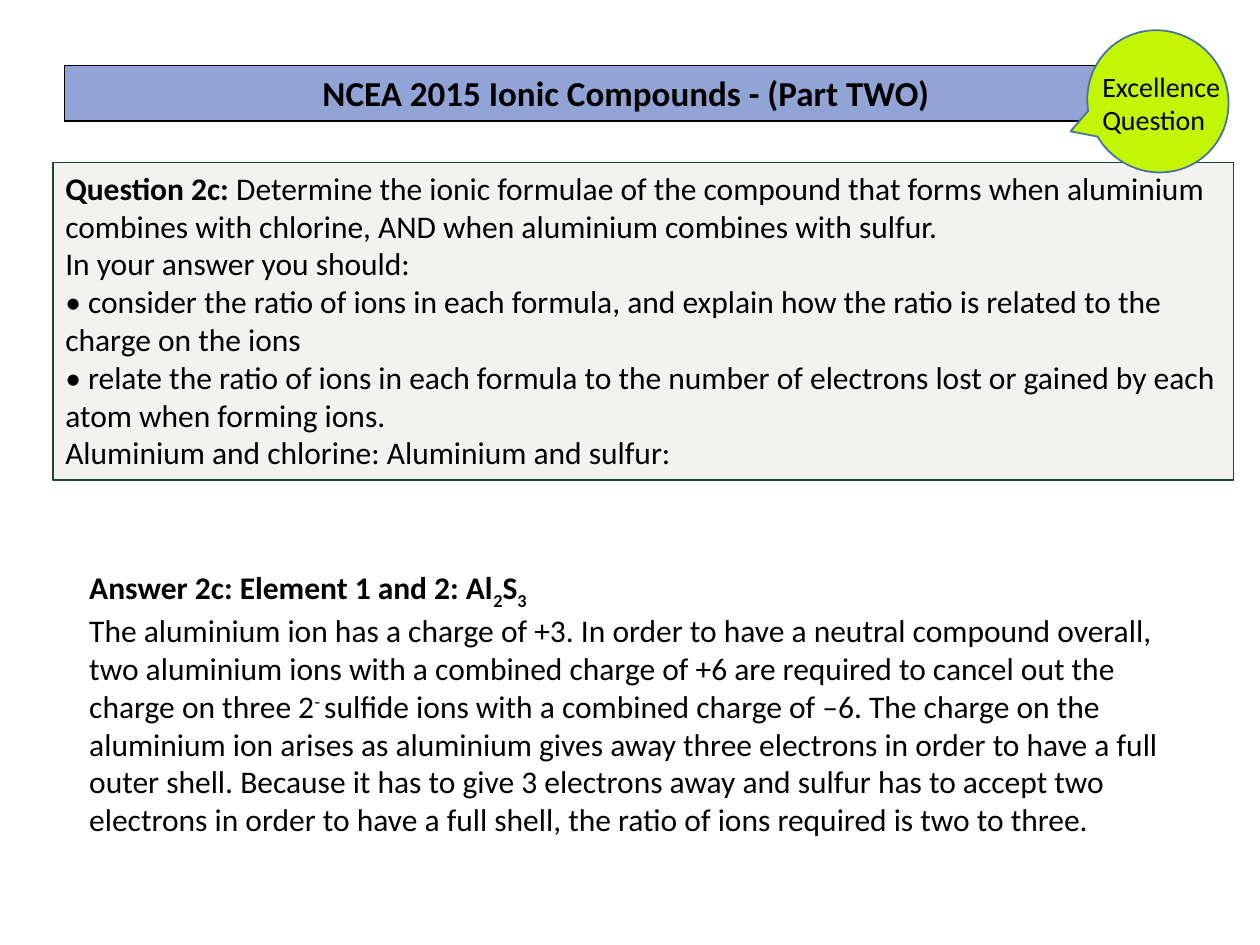
from lxml.etree import SubElement
from pptx import Presentation
from pptx.dml.color import RGBColor
from pptx.enum.shapes import MSO_SHAPE
from pptx.enum.text import MSO_ANCHOR, MSO_AUTO_SIZE, PP_ALIGN
from pptx.oxml.ns import qn
from pptx.util import Inches, Pt

COLORS = {"text": "000000", "banner": "92A4D6", "panel": "EFEFEE",
          "panel_line": "1B452F", "callout": "C2F604", "callout_line": "43739E"}
FONT = "Calibri"
FRAME_FORMAT = {"word_wrap": True, "auto_size": MSO_AUTO_SIZE.SHAPE_TO_FIT_TEXT,
                "vertical_anchor": MSO_ANCHOR.TOP}
BASELINES = {"sub": -25, "super": 30}

# Each paragraph is a list of runs: (text, styles)
TITLE = [[("NCEA 2015 Ionic Compounds - (Part TWO) ", "bold")]]
QUESTION = [
    [("Question 2c: ", "bold"),
     ("Determine the ionic formulae of the compound that forms when aluminium "
      "combines with chlorine, AND when aluminium combines with sulfur.", "")],
    [("In your answer you should:", "")],
    [("• consider the ratio of ions in each formula, and explain how the ratio "
      "is related to the charge on the ions", "")],
    [("• relate the ratio of ions in each formula to the number of electrons "
      "lost or gained by each atom when forming ions.", "")],
    [("Aluminium and chlorine: Aluminium and sulfur:", "")],
]
LEVEL = [[("Excellence", "")], [("Question", "")]]
ANSWER = [
    [("Answer 2c: Element 1 and 2: Al", "bold"), ("2", "bold sub"),
     ("S", "bold"), ("3", "bold sub")],
    [("The aluminium ion has a charge of +3. In order to have a neutral compound "
      "overall, two aluminium ions with a combined charge of +6 are required to "
      "cancel out the charge on three 2", ""),
     ("- ", "super"),
     ("sulfide ions with a combined charge of –6. The charge on the aluminium ion "
      "arises as aluminium gives away three electrons in order to have a full "
      "outer shell. Because it has to give 3 electrons away and sulfur has to "
      "accept two electrons in order to have a full shell, the ratio of ions "
      "required is two to three.", "")],
]


def color(name):
    return RGBColor.from_string(COLORS[name])


def write_text(shape, paragraphs, size, align=PP_ALIGN.LEFT):
    frame = shape.text_frame
    for name, value in FRAME_FORMAT.items():
        setattr(frame, name, value)
    for index, runs in enumerate(paragraphs):
        paragraph = frame.add_paragraph() if index else frame.paragraphs[0]
        paragraph.alignment = align
        for text, styles in runs:
            run = paragraph.add_run()
            run.text = text
            font_format = {"name": FONT, "size": Pt(size), "bold": "bold" in styles}
            for name, value in font_format.items():
                setattr(run.font, name, value)
            run.font.color.rgb = color("text")
            for style in styles.split():
                if style in BASELINES:
                    run._r.get_or_add_rPr().set("baseline", str(BASELINES[style] * 1000))


def add_filled_shape(slide, kind, box, fill, line, line_width, opacity=100):
    shape = slide.shapes.add_shape(kind, *map(Inches, box))
    shape.shadow.inherit = False
    shape.fill.solid()
    shape.fill.fore_color.rgb = color(fill)
    if opacity < 100:
        fill_color = shape._element.spPr.find(qn("a:solidFill"))[0]
        SubElement(fill_color, qn("a:alpha"), val=str(opacity * 1000))
    shape.line.color.rgb = color(line)
    shape.line.width = Pt(line_width)
    return shape


def main():
    presentation = Presentation()
    presentation.slide_width, presentation.slide_height = Inches(10), Inches(7.5)
    slide = presentation.slides.add_slide(presentation.slide_layouts[6])

    banner = add_filled_shape(slide, MSO_SHAPE.RECTANGLE, (0.51, 0.52, 8.98, 0.44),
                              "banner", "text", 0.75)
    write_text(banner, TITLE, 20, PP_ALIGN.CENTER)
    panel = add_filled_shape(slide, MSO_SHAPE.RECTANGLE, (0.42, 1.29, 9.37, 2.52),
                             "panel", "panel_line", 0.75, opacity=79)
    write_text(panel, QUESTION, 18)
    callout = add_filled_shape(slide, MSO_SHAPE.OVAL_CALLOUT, (8.62, 0.25, 1.14, 1.11),
                               "callout", "callout_line", 1)
    callout.rotation = 52.1

    for box, paragraphs, size in (((8.65, 0.5, 1.26, 0.64), LEVEL, 16),
                                  ((0.61, 4.46, 8.79, 2.22), ANSWER, 18)):
        write_text(slide.shapes.add_textbox(*map(Inches, box)), paragraphs, size)

    presentation.save("out.pptx")


if __name__ == "__main__":
    main()
